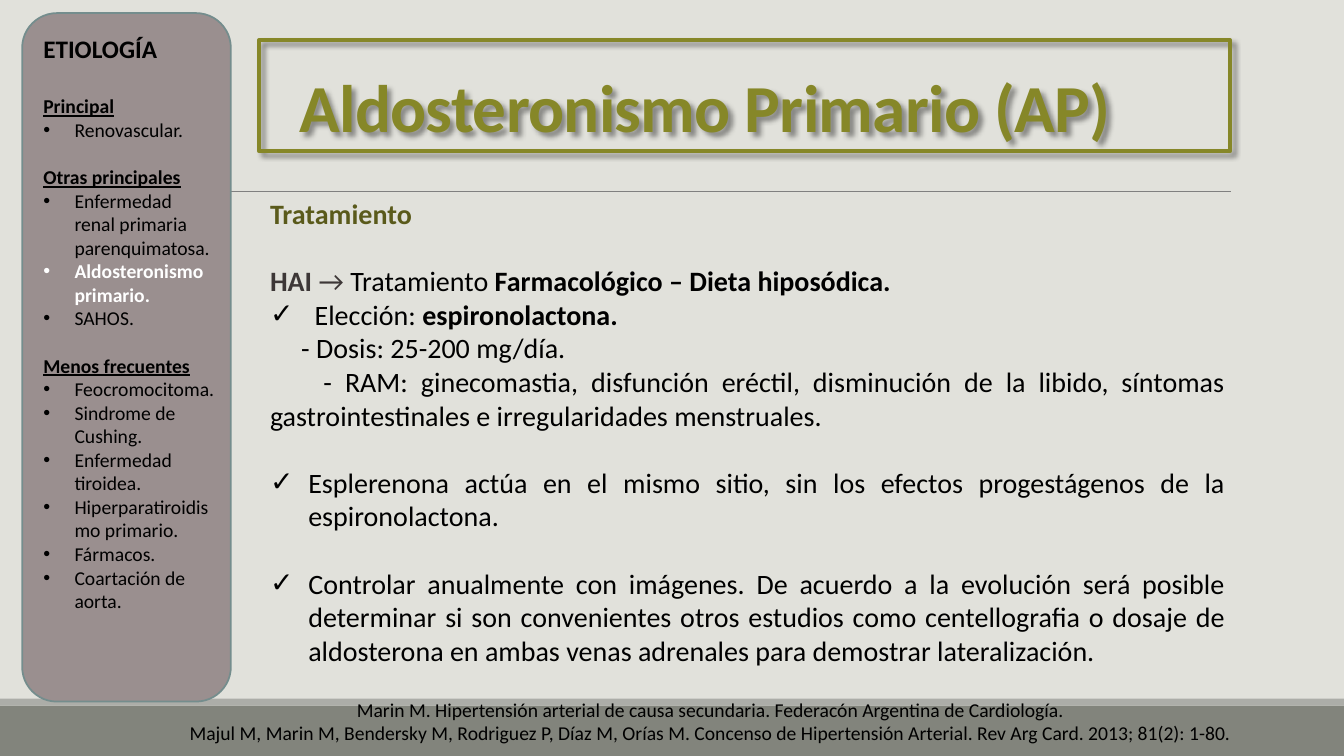
from dataclasses import dataclass

import pptx
import pptx.dml.color
import pptx.enum.shapes
import pptx.enum.text
import pptx.oxml
import pptx.oxml.ns
import pptx.util
from lxml import etree

Pt = pptx.util.Pt
In = pptx.util.Inches
Align = pptx.enum.text.PP_ALIGN
Kind = pptx.enum.shapes.MSO_SHAPE
WIDE, HIGH = In(13.33), In(7.5)
FACE = "Calibri"

INK = {
    "back": "E1E1DB", "foot": "82847C", "band": "ACADA8", "rule": "808080",
    "olive": "868728", "panel": "9A8F8F", "edge": "748D8D", "head": "5A5A1B",
    "dark": "3D3737", "black": "000000", "white": "FFFFFF",
}


@dataclass
class Box:
    """Left, top, width and height in percent of the slide."""
    x: float
    y: float
    w: float
    h: float

    def place(self) -> tuple[int, int, int, int]:
        return (int(WIDE * self.x / 100), int(HIGH * self.y / 100),
                int(WIDE * self.w / 100), int(HIGH * self.h / 100))


@dataclass
class Run:
    text: str
    bold: bool | None = None
    ink: str | None = None


@dataclass
class Para:
    runs: list[Run]
    size: float = 14
    bold: bool = False
    under: bool = False
    ink: str = "black"
    align: Align = Align.LEFT
    left: float = 0       # inches
    first: float = 0      # inches, relative to left
    mark: str = ""
    gap: float = 0        # points before


def tint(name: str) -> pptx.dml.color.RGBColor:
    return pptx.dml.color.RGBColor.from_string(INK[name])


def draw(slide, box: Box, kind: Kind, fill: str = "", line: str = "",
         width: float = 0):
    shape = slide.shapes.add_shape(kind, *box.place())
    shape.shadow.inherit = False
    if fill:
        shape.fill.solid()
        shape.fill.fore_color.rgb = tint(fill)
    else:
        shape.fill.background()
    if line:
        shape.line.color.rgb = tint(line)
        shape.line.width = Pt(width)
    else:
        shape.line.fill.background()
    return shape


def write(frame, paras: list[Para]) -> None:
    frame.word_wrap = True
    for i, item in enumerate(paras):
        para = frame.paragraphs[0] if i == 0 else frame.add_paragraph()
        para.alignment = item.align
        if item.gap:
            para.space_before = Pt(item.gap)
        prop = para._p.get_or_add_pPr()
        if item.left or item.first:
            prop.set("marL", str(In(item.left)))
            prop.set("indent", str(In(item.first)))
        if item.mark:
            for tag, key, val in (("a:buFont", "typeface", "Arial"),
                                  ("a:buChar", "char", item.mark)):
                node = etree.SubElement(prop, pptx.oxml.ns.qn(tag))
                node.set(key, val)
        font = para.font
        font.name, font.size = FACE, Pt(item.size)
        font.bold, font.underline = item.bold, item.under
        font.color.rgb = tint(item.ink)
        for part in item.runs:
            run = para.add_run()
            run.text = part.text
            if part.bold is not None:
                run.font.bold = part.bold
            if part.ink:
                run.font.color.rgb = tint(part.ink)


def label(slide, box: Box, paras: list[Para]) -> None:
    frame = slide.shapes.add_textbox(*box.place()).text_frame
    write(frame, paras)
    frame.auto_size = pptx.enum.text.MSO_AUTO_SIZE.SHAPE_TO_FIT_TEXT


def rule(slide, x: float, y: float, end: float) -> None:
    left, top, span, _ = Box(x, y, end - x, 0).place()
    line = slide.shapes.add_connector(
        pptx.enum.shapes.MSO_CONNECTOR.STRAIGHT, left, top, left + span, top)
    line.line.color.rgb = tint("rule")
    line.line.width = Pt(0.5)
    etree.SubElement(line._element.spPr, pptx.oxml.ns.qn("a:effectLst"))


def title(slide, box: Box, text: str) -> None:
    shape = draw(slide, box, Kind.RECTANGLE, line="olive", width=3)
    glow = shape._element.spPr.find(pptx.oxml.ns.qn("a:effectLst"))
    glow.append(pptx.oxml.parse_xml(
        f'<a:outerShdw {pptx.oxml.ns.nsdecls("a")} blurRad="{Pt(4)}" '
        f'dist="{Pt(3)}" dir="2700000" algn="tl" rotWithShape="0">'
        f'<a:srgbClr val="{INK["black"]}"><a:alpha val="40000"/></a:srgbClr>'
        '</a:outerShdw>'))
    frame = shape.text_frame
    frame.vertical_anchor = pptx.enum.text.MSO_ANCHOR.BOTTOM
    write(frame, [Para([Run(text)], 48, True, ink="olive", left=0.3)])
    para = frame.paragraphs[0]
    para.line_spacing = 0.85
    para.runs[0]._r.get_or_add_rPr().set("spc", "-50")


# Sidebar groups: heading, gap before it, entries
GROUPS = [
    ("Principal", 22, ["Renovascular."]),
    ("Otras principales", 17, ["Enfermedad renal primaria parenquimatosa.",
                               "Aldosteronismo primario.", "SAHOS."]),
    ("Menos frecuentes", 17, ["Feocromocitoma.", "Sindrome de Cushing.",
                              "Enfermedad tiroidea.",
                              "Hiperparatiroidismo primario.", "Fármacos.",
                              "Coartación de aorta."]),
]
TOPIC = "Aldosteronismo primario."

CITES = [
    "Marin M. Hipertensión arterial de causa secundaria. "
    "Federacón Argentina de Cardiología.",
    "Majul M, Marin M, Bendersky M, Rodriguez P, Díaz M, Orías M. Concenso de "
    "Hipertensión Arterial. Rev Arg Card. 2013; 81(2): 1-80.",
]


def side() -> list[Para]:
    paras = [Para([Run("ETIOLOGÍA")], 18, True)]
    for head, gap, items in GROUPS:
        paras.append(Para([Run(head)], bold=True, under=True, gap=gap))
        for text in items:
            now = text == TOPIC
            paras.append(Para([Run(text)], bold=now, left=0.31, first=-0.31,
                              ink="white" if now else "black", mark="•"))
    return paras


def body() -> list[Para]:
    def line(*runs: Run, **more) -> Para:
        return Para(list(runs), 20, align=Align.JUSTIFY, **more)

    tick = {"left": 0.38, "first": -0.38, "mark": "✓"}
    return [
        line(Run("Tratamiento"), bold=True, ink="head"),
        line(Run("HAI ", True, "dark"), Run("→ ", ink="dark"),
             Run("Tratamiento "),
             Run("Farmacológico – Dieta hiposódica.", True), gap=24),
        line(Run(" Elección: "), Run("espironolactona.", True), **tick),
        line(Run("- Dosis: 25-200 mg/día."), first=0.31),
        line(Run("- RAM: ginecomastia, disfunción eréctil, disminución de la "
                 "libido, síntomas gastrointestinales e irregularidades "
                 "menstruales."), first=0.53),
        line(Run("Esplerenona actúa en el mismo sitio, sin los efectos "
                 "progestágenos de la espironolactona."), gap=24, **tick),
        line(Run("Controlar anualmente con imágenes. De acuerdo a la evolución "
                 "será posible determinar si son convenientes otros estudios "
                 "como centellografia o dosaje de aldosterona en ambas venas "
                 "adrenales para demostrar lateralización."), gap=24, **tick),
    ]


def main() -> None:
    deck = pptx.Presentation()
    deck.slide_width, deck.slide_height = WIDE, HIGH
    slide = deck.slides.add_slide(deck.slide_layouts[6])
    slide.background.fill.solid()
    slide.background.fill.fore_color.rgb = tint("back")

    # Footer bands and rule
    draw(slide, Box(0, 93.33, 100, 6.67), Kind.RECTANGLE, "foot")
    draw(slide, Box(0, 92.4, 100, 0.93), Kind.RECTANGLE, "band")
    rule(slide, 9.83, 25.33, 91.6)

    # Title
    title(slide, Box(19.28, 5.33, 72.24, 14.67), "Aldosteronismo Primario (AP)")

    # Sidebar, citations and body
    draw(slide, Box(1.65, 1.73, 15.53, 91.07), Kind.ROUNDED_RECTANGLE,
         "panel", "edge", 1.25)
    label(slide, Box(12, 91.6, 81.77, 10.8),
          [Para([Run(text)], align=Align.CENTER) for text in CITES])
    label(slide, Box(2.48, 3.73, 14.25, 91.07), side())
    label(slide, Box(19.35, 25.33, 72.54, 64.13), body())

    deck.save("out.pptx")


if __name__ == "__main__":
    main()
